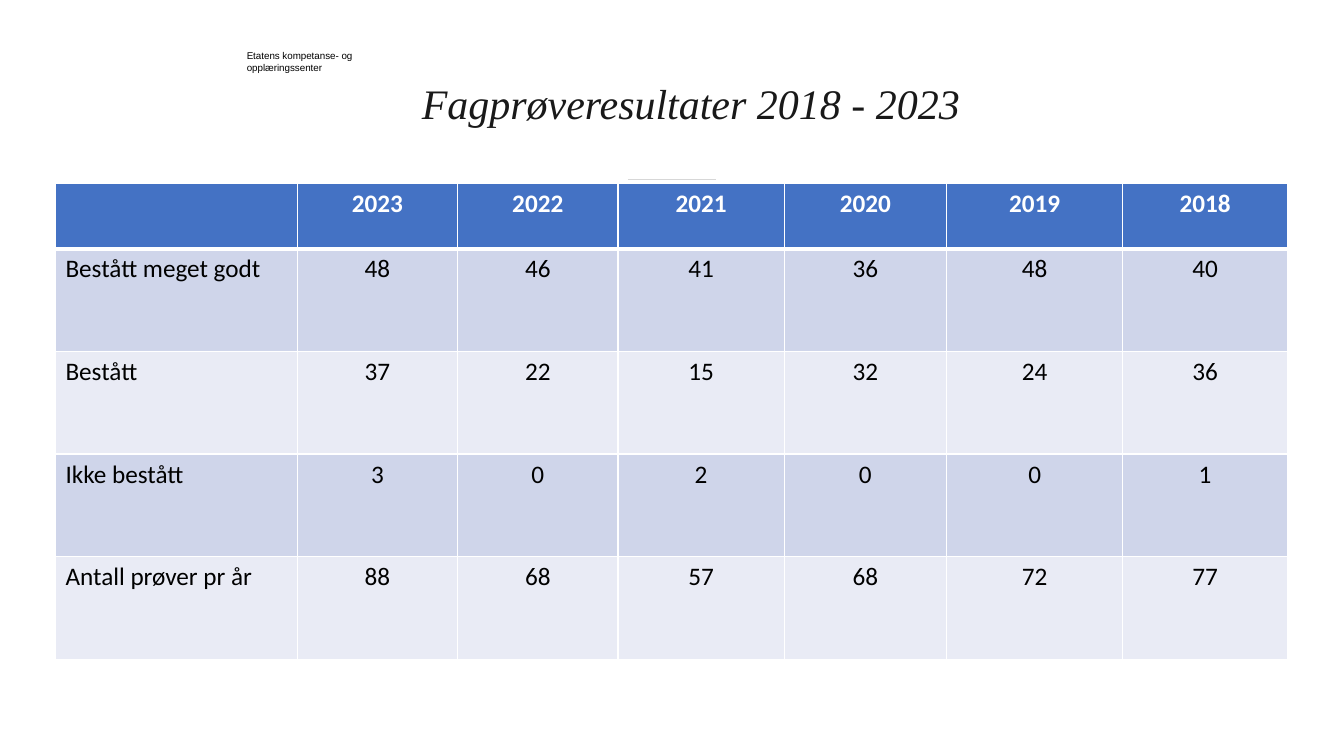
import pptx
import pptx.dml.color
import pptx.enum.shapes
import pptx.enum.text
import pptx.oxml
import pptx.oxml.ns
import pptx.util

Pt = pptx.util.Pt
ALIGN = pptx.enum.text.PP_ALIGN

COLORS = {
    "title": "191919",
    "text": "000000",
    "white": "FFFFFF",
    "rule": "D7D7D7",
    "header": "4472C4",
    "odd_row": "CFD5EA",
    "even_row": "E9EBF5",
}
COLUMN_WIDTHS = [172.8, 114.5, 114.5, 118.8, 115.9, 126, 117.4]
ROW_HEIGHTS = [46.8] + [73.3] * 4
RESULTS = [
    ["", "2023", "2022", "2021", "2020", "2019", "2018"],
    ["Bestått meget godt", "48", "46", "41", "36", "48", "40"],
    ["Bestått", "37", "22", "15", "32", "24", "36"],
    ["Ikke bestått", "3", "0", "2", "0", "0", "1"],
    ["Antall prøver pr år", "88", "68", "57", "68", "72", "77"],
]


def rgb(name):
    return pptx.dml.color.RGBColor.from_string(COLORS[name])


class SlideBuilder:
    def __init__(self, presentation):
        self.slide = presentation.slides.add_slide(presentation.slide_layouts[5])
        self.shapes = self.slide.shapes

    def style(self, paragraph, font_name, size, color, align=ALIGN.LEFT, bold=False, italic=False):
        paragraph.alignment = align
        font = paragraph.font
        font.name, font.size = font_name, Pt(size)
        font.bold, font.italic = bold, italic
        font.color.rgb = rgb(color)

    def title(self, text, left, top, width, height):
        shape = self.shapes.title
        shape.left, shape.top, shape.width, shape.height = map(Pt, (left, top, width, height))
        frame = shape.text_frame
        frame.text = text
        frame.word_wrap = True
        frame.auto_size = pptx.enum.text.MSO_AUTO_SIZE.NONE
        frame.vertical_anchor = pptx.enum.text.MSO_ANCHOR.BOTTOM
        paragraph = frame.paragraphs[0]
        paragraph.line_spacing = 0.9
        self.style(paragraph, "Times New Roman", 30, "title", ALIGN.CENTER, italic=True)

    def text(self, text, left, top, width, height):
        frame = self.shapes.add_textbox(*map(Pt, (left, top, width, height))).text_frame
        frame.word_wrap = True
        frame.text = text
        self.style(frame.paragraphs[0], "Arial", 7, "text")

    def line(self, start_x, start_y, end_x, end_y):
        connector = self.shapes.add_connector(
            pptx.enum.shapes.MSO_CONNECTOR.STRAIGHT, *map(Pt, (start_x, start_y, end_x, end_y))
        )
        connector.line.color.rgb = rgb("rule")
        connector.line.width = Pt(0.5)
        connector._element.spPr.append(pptx.oxml.parse_xml(
            f"<a:effectLst {pptx.oxml.ns.nsdecls('a')}/>"
        ))

    def borders(self, cell, top, bottom):
        """Draw white cell borders; top and bottom are line widths in points."""
        properties = cell._tc.get_or_add_tcPr()
        for side, width in (("L", 1), ("R", 1), ("T", top), ("B", bottom)):
            properties.append(pptx.oxml.parse_xml(
                f"<a:ln{side} {pptx.oxml.ns.nsdecls('a')} w=\"{Pt(width)}\">"
                f"<a:solidFill><a:srgbClr val=\"{COLORS['white']}\"/></a:solidFill></a:ln{side}>"
            ))

    def table(self, rows, left, top, column_widths, row_heights):
        size = map(Pt, (left, top, sum(column_widths), sum(row_heights)))
        table = self.shapes.add_table(len(rows), len(column_widths), *size).table
        for column, width in zip(table.columns, column_widths):
            column.width = Pt(width)
        for row, height in zip(table.rows, row_heights):
            row.height = Pt(height)
        for row_index, values in enumerate(rows):
            is_header = row_index == 0
            fill = "header" if is_header else "odd_row" if row_index % 2 else "even_row"
            for column_index, value in enumerate(values):
                cell = table.cell(row_index, column_index)
                cell.text = value
                self.style(
                    cell.text_frame.paragraphs[0], "Calibri", 18,
                    "white" if is_header else "text",
                    ALIGN.CENTER if column_index else ALIGN.LEFT, bold=is_header,
                )
                self.borders(cell, 3 if row_index == 1 else 1, 3 if is_header else 1)
                cell.fill.solid()
                cell.fill.fore_color.rgb = rgb(fill)


def main():
    presentation = pptx.Presentation()
    presentation.slide_width, presentation.slide_height = Pt(960), Pt(540)
    builder = SlideBuilder(presentation)
    builder.line(448.5, 128.2, 511.2, 128.2)
    builder.title("Fagprøveresultater 2018 - 2023", 214.6, 33.6, 558, 62)
    builder.text("Etatens kompetanse- og opplæringssenter", 169.2, 32, 139, 25)
    builder.table(RESULTS, 39.6, 131, COLUMN_WIDTHS, ROW_HEIGHTS)
    presentation.save("out.pptx")


if __name__ == "__main__":
    main()
